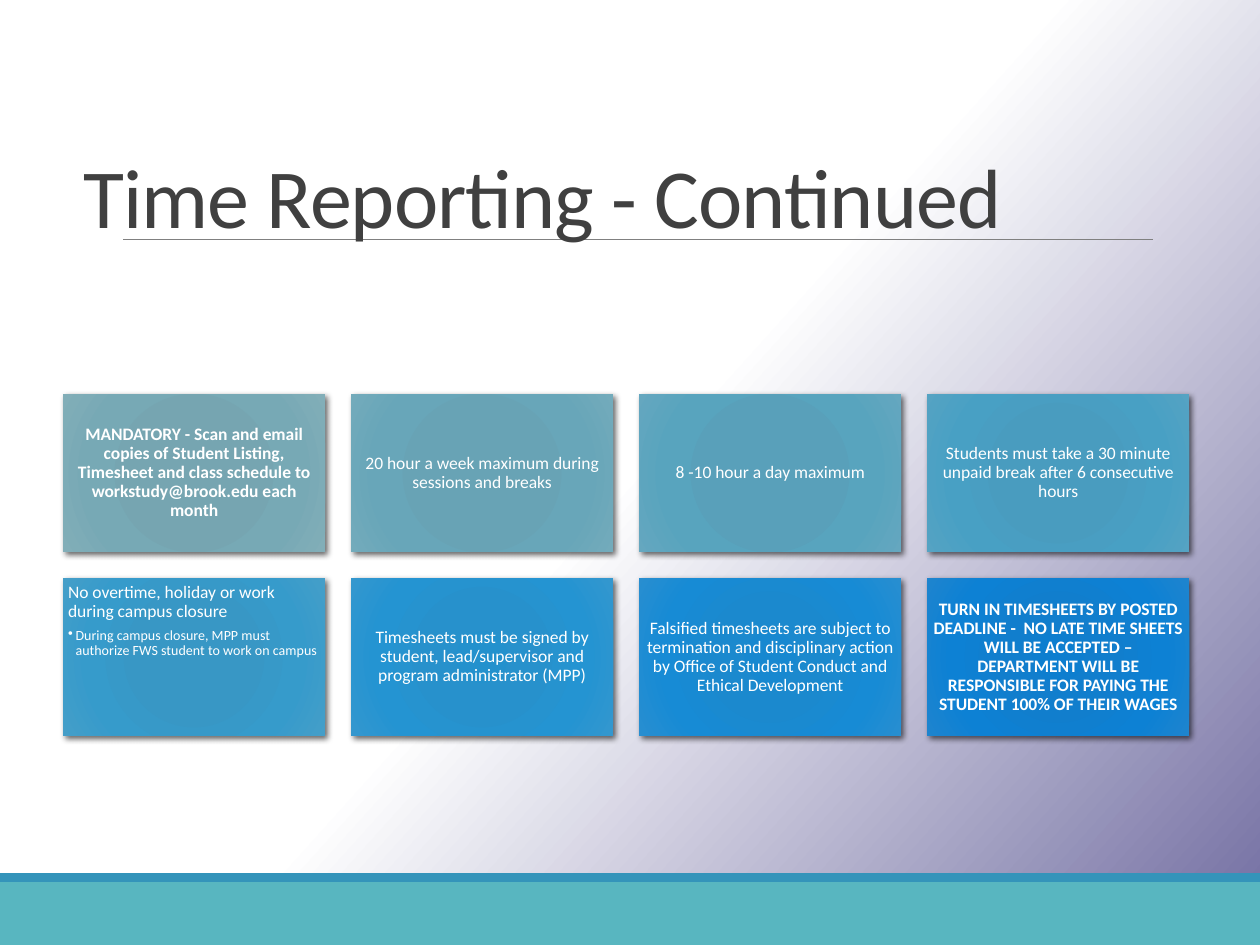
from lxml import etree
from pptx import Presentation
from pptx.dml.color import RGBColor
from pptx.enum.shapes import MSO_CONNECTOR as CONNECTOR, MSO_SHAPE as SHAPE
from pptx.enum.text import MSO_ANCHOR as ANCHOR, MSO_AUTO_SIZE as AUTO_SIZE, PP_ALIGN as ALIGN
from pptx.oxml import parse_xml
from pptx.oxml.ns import nsdecls, qn
from pptx.util import Inches, Pt

FONT = "Calibri"
COLUMNS = 4
CARD_WIDTH, CARD_HEIGHT = 2.08, 1.25
CARD_LEFT, CARD_TOP = 0.5, 3.13
COLUMN_STEP, ROW_STEP = 2.286, 1.46
CARD_STOPS = (0, 34, 70, 100)
LINEAR = '<a:lin ang="2520000" scaled="0"/>'
RADIAL = ('<a:path path="circle"><a:fillToRect l="100000" t="100000" '
          'r="100000" b="100000"/></a:path>')

# Each card: gradient colours, bold heading or not, heading, bullets
CARDS = [
    ("74A4B1 76A5B1 77A9B5 82AEB8", True,
     "MANDATORY - Scan and email copies of Student Listing, Timesheet and "
     "class schedule to workstudy@brook.edu each month", []),
    ("66A2B5 68A3B5 68A6B9 73ABBB", False,
     "20 hour a week maximum during sessions and breaks", []),
    ("56A0BA 59A0BA 58A4BE 65A7BF", False, "8 -10 hour a day maximum", []),
    ("469CBF 499CBF 48A0C4 55A3C3", False,
     "Students must take a 30 minute unpaid break after 6 consecutive hours", []),
    ("3597C6 3897C5 369BCB 459EC8", False,
     "No overtime, holiday or work during campus closure\u00a0",
     ["During campus closure, MPP must authorize FWS student to work on campus"]),
    ("2391CD 2791CC 2494D2 3497CE", False,
     "Timesheets must be signed by student, lead/supervisor and program "
     "administrator (MPP)", []),
    ("1788D0 1B89CE 178BD5 288ED0", False,
     "Falsified timesheets are subject to termination and disciplinary action "
     "by Office of Student Conduct and Ethical Development", []),
    ("0D7ECF 117ECD 0D81D4 1E84CE", True,
     "TURN IN TIMESHEETS BY POSTED DEADLINE -\u00a0 NO LATE TIME SHEETS WILL BE "
     "ACCEPTED \u2013 DEPARTMENT WILL BE RESPONSIBLE FOR PAYING THE STUDENT "
     "100% OF THEIR WAGES", []),
]


def color(hex_code):
    """Turn a hex string into a colour."""
    return RGBColor.from_string(hex_code)


def set_gradient(fill, owner, stops, direction):
    """Fill the owner element with gradient stops in a given direction."""
    fill.solid()
    solid = next(owner.iter(qn("a:solidFill")))
    stop_xml = "".join(
        f'<a:gs pos="{position * 1000}"><a:srgbClr val="{hex_code}"/></a:gs>'
        for position, hex_code in stops)
    gradient = parse_xml(f'<a:gradFill {nsdecls("a")} rotWithShape="1">'
                         f'<a:gsLst>{stop_xml}</a:gsLst>{direction}</a:gradFill>')
    solid.getparent().replace(solid, gradient)


def add_shadow(card):
    """Give a card a soft shadow to the lower right."""
    card.shadow.inherit = False
    effects = card.element.spPr.find(qn("a:effectLst"))
    effects.append(parse_xml(
        f'<a:outerShdw {nsdecls("a")} blurRad="{Pt(3.5)}" dist="{Pt(2)}" '
        'dir="2700000" algn="ctr" rotWithShape="0"><a:srgbClr val="000000">'
        '<a:alpha val="60000"/></a:srgbClr></a:outerShdw>'))


def format_paragraph(paragraph, size, hex_code, bold=False, align=ALIGN.LEFT, spacing=0.9):
    """Set the spacing, alignment and font of a paragraph."""
    paragraph.alignment = align
    paragraph.line_spacing = spacing
    for run in paragraph.runs:
        run.font.name = FONT
        run.font.size = Pt(size)
        run.font.bold = bold
        run.font.color.rgb = color(hex_code)


def add_bullet(frame, text):
    """Add a small bulleted paragraph with a hanging indent."""
    paragraph = frame.add_paragraph()
    paragraph.text = text
    format_paragraph(paragraph, 8, "FFFFFF")
    properties = paragraph._p.get_or_add_pPr()
    properties.set("lvl", "1")
    properties.set("marL", str(Inches(0.06)))
    properties.set("indent", str(Inches(-0.06)))
    etree.SubElement(properties, qn("a:buChar")).set("char", "\u2022")


def add_band(slide, top, height, hex_code):
    """Add a plain band across the slide."""
    band = slide.shapes.add_shape(SHAPE.RECTANGLE, 0, Inches(top), Inches(10), Inches(height))
    band.shadow.inherit = False
    band.fill.solid()
    band.fill.fore_color.rgb = color(hex_code)
    band.line.fill.background()


def add_rule(slide):
    """Add the thin line under the title."""
    rule = slide.shapes.add_connector(
        CONNECTOR.STRAIGHT, Inches(0.98), Inches(1.9), Inches(9.15), Inches(1.9))
    rule.line.color.rgb = color("808080")
    rule.line.width = Pt(0.5)
    etree.SubElement(rule._element.spPr, qn("a:effectLst"))


def set_title(slide, text):
    """Place and format the title, in front of the rule."""
    title = slide.shapes.title
    title.left, title.top = Inches(0.56), Inches(0.82)
    title.width, title.height = Inches(7.89), Inches(1.18)
    frame = title.text_frame
    frame.text = text
    frame.auto_size = AUTO_SIZE.NONE
    frame.vertical_anchor = ANCHOR.BOTTOM
    heading = frame.paragraphs[0]
    format_paragraph(heading, 48, "404040", spacing=0.85)
    heading.runs[0]._r.get_or_add_rPr().set("spc", "-50")
    title.element.getparent().append(title.element)


def add_card(slide, index, hex_codes, bold, heading, bullets):
    """Add one rule card at its place in the grid."""
    row, column = divmod(index, COLUMNS)
    card = slide.shapes.add_shape(
        SHAPE.RECTANGLE,
        Inches(CARD_LEFT + column * COLUMN_STEP), Inches(CARD_TOP + row * ROW_STEP),
        Inches(CARD_WIDTH), Inches(CARD_HEIGHT))
    set_gradient(card.fill, card.element.spPr, zip(CARD_STOPS, hex_codes.split()), RADIAL)
    card.line.fill.background()
    add_shadow(card)
    frame = card.text_frame
    frame.word_wrap = True
    frame.margin_left = frame.margin_right = Inches(0.04)
    frame.margin_top = frame.margin_bottom = Inches(0.04)
    frame.vertical_anchor = ANCHOR.TOP if bullets else ANCHOR.MIDDLE
    frame.text = heading
    first = frame.paragraphs[0]
    format_paragraph(first, 10, "FFFFFF", bold, ALIGN.LEFT if bullets else ALIGN.CENTER)
    first.space_after = Pt(4)
    for bullet in bullets:
        add_bullet(frame, bullet)


def main():
    """Build the slide and save it."""
    deck = Presentation()
    deck.slide_width, deck.slide_height = Inches(10), Inches(7.5)
    slide = deck.slides.add_slide(deck.slide_layouts[5])
    set_gradient(slide.background.fill, slide.element,
                 [(0, "FFFFFF"), (50, "FFFFFF"), (100, "716DA1")], LINEAR)
    add_band(slide, 7, 0.5, "58B6C0")
    add_band(slide, 6.93, 0.07, "3494BA")
    add_rule(slide)
    set_title(slide, "Time Reporting - Continued")
    for index, card in enumerate(CARDS):
        add_card(slide, index, *card)
    deck.save("out.pptx")


main()
